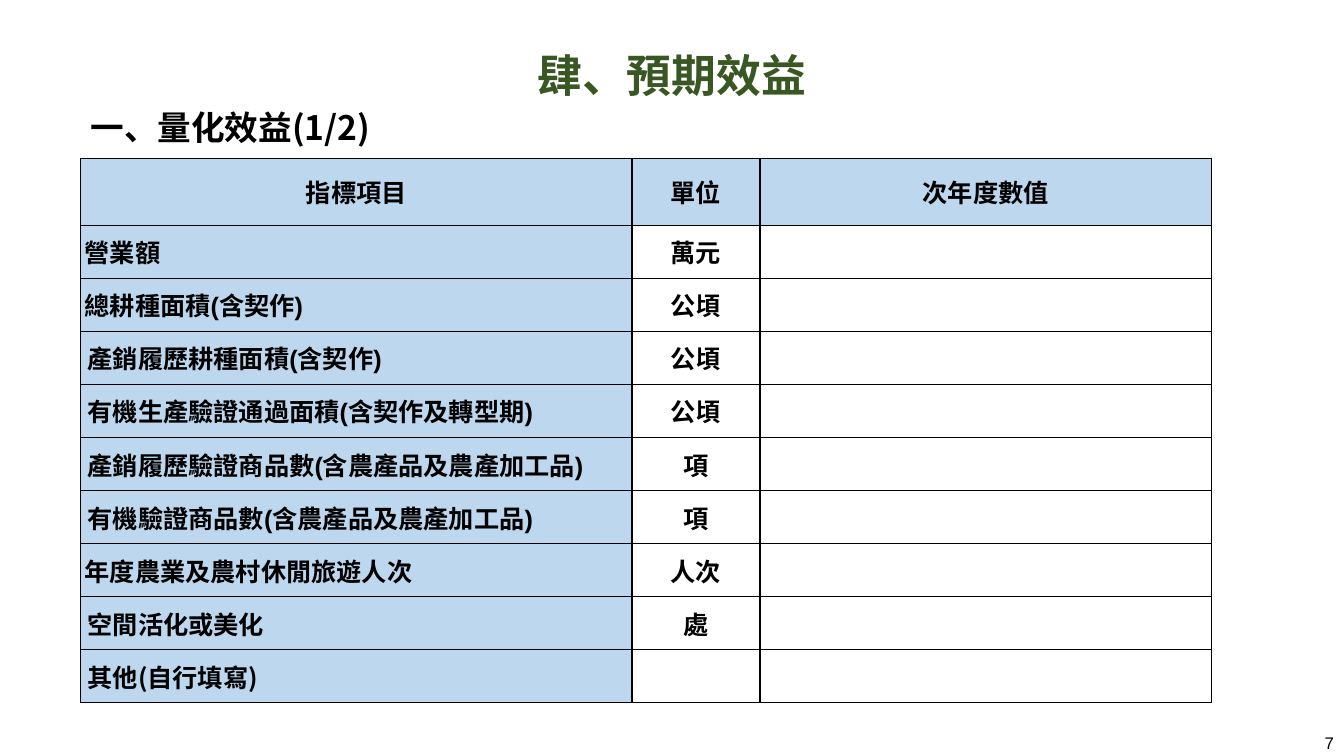
"""Build the slide on expected benefits: a title, a subtitle and an indicator table."""
import pptx
import pptx.dml.color
import pptx.enum.text
import pptx.oxml
import pptx.oxml.ns
import pptx.util

WIDTH, HEIGHT = 13.33, 7.5
SANS, CJK = "Arial", "Noto Sans CJK SC"
BLACK, WHITE, GREEN, BLUE = "000000", "FFFFFF", "385723", "BDD7EE"
LEFT = pptx.enum.text.PP_ALIGN.LEFT
CENTER = pptx.enum.text.PP_ALIGN.CENTER
RIGHT = pptx.enum.text.PP_ALIGN.RIGHT
TOP = pptx.enum.text.MSO_ANCHOR.TOP
MIDDLE = pptx.enum.text.MSO_ANCHOR.MIDDLE
NARROW, WIDE, HANGING = 0.04, 0.07, 0.33

COLUMNS = (41.02, 9.53, 33.6)
HEADER_ROW, BODY_ROW = 8.87, 7.02
HEADINGS = ("指標項目", "單位", "次年度數值")
INDICATORS = (
    ("營業額", "萬元", NARROW, SANS, 0),
    ("總耕種面積(含契作)", "公頃", NARROW, SANS, 0),
    ("產銷履歷耕種面積(含契作)", "公頃", WIDE, SANS, 0),
    ("有機生產驗證通過面積(含契作及轉型期)", "公頃", WIDE, SANS, 0),
    ("產銷履歷驗證商品數(含農產品及農產加工品)", "項", WIDE, SANS, 0),
    ("有機驗證商品數(含農產品及農產加工品)", "項", WIDE, SANS, 0),
    ("年度農業及農村休閒旅遊人次", "人次", NARROW, CJK, 0),
    ("空間活化或美化", "處", WIDE, CJK, HANGING),
    ("其他(自行填寫)", "", WIDE, CJK, 0),
)


def across(share):
    """Return a percentage of the slide width as a length."""
    return pptx.util.Inches(WIDTH * share / 100)


def down(share):
    """Return a percentage of the slide height as a length."""
    return pptx.util.Inches(HEIGHT * share / 100)


def color(value):
    """Return the colour for a hex string."""
    return pptx.dml.color.RGBColor.from_string(value)


def apply(target, values):
    """Set each named attribute on the target."""
    for name, value in values.items():
        setattr(target, name, value)


def write(para, text, size, face, ink=BLACK, bold=True, **layout):
    """Write one formatted span into a paragraph."""
    apply(para, layout)
    span = para.add_run()
    span.text = text
    apply(span.font, {"size": pptx.util.Pt(size), "name": face, "bold": bold})
    span.font.color.rgb = color(ink)
    east = pptx.oxml.parse_xml(f'<a:ea {pptx.oxml.ns.nsdecls("a")} typeface="{CJK}"/>')
    span.font._element.find(pptx.oxml.ns.qn("a:latin")).addnext(east)


def add_text(page, area, text, size, face, anchor=MIDDLE, inset=0, **style):
    """Add a text box whose area is given in percentages of the slide."""
    left, top, width, height = area
    box = page.shapes.add_textbox(across(left), down(top), across(width), down(height))
    margin = pptx.util.Inches(inset)
    apply(box.text_frame, {"word_wrap": True, "vertical_anchor": anchor,
                           "margin_top": margin, "margin_bottom": margin})
    write(box.text_frame.paragraphs[0], text, size, face, **style)


def add_borders(cell):
    """Draw thin black lines on all four sides of a cell."""
    properties = cell._tc.get_or_add_tcPr()
    for position, side in enumerate(("lnL", "lnR", "lnT", "lnB")):
        properties.insert(position, pptx.oxml.parse_xml(
            f'<a:{side} {pptx.oxml.ns.nsdecls("a")} w="12700"><a:solidFill>'
            f'<a:srgbClr val="{BLACK}"/></a:solidFill></a:{side}>'))


def fill_cell(cell, text, fill, inset=NARROW, face=SANS, align=CENTER, hanging=0):
    """Fill, frame and label one table cell."""
    margin = pptx.util.Inches(inset)
    apply(cell, {"vertical_anchor": MIDDLE, "margin_left": margin, "margin_right": margin,
                 "margin_top": 0, "margin_bottom": 0})
    cell.fill.solid()
    cell.fill.fore_color.rgb = color(fill)
    add_borders(cell)
    para = cell.text_frame.paragraphs[0]
    if hanging:
        indent = pptx.util.Inches(hanging)
        apply(para._p.get_or_add_pPr(), {"marL": indent, "indent": -indent})
    if text:
        write(para, text, 18, face, alignment=align)


def add_indicators(page):
    """Add the table of indicators, units and next-year values."""
    heights = [HEADER_ROW] + [BODY_ROW] * len(INDICATORS)
    table = page.shapes.add_table(len(heights), len(COLUMNS), across(6), down(20.93),
                                  across(sum(COLUMNS)), down(sum(heights))).table
    apply(table, {"first_row": False, "horz_banding": False})
    for column, share in zip(table.columns, COLUMNS):
        column.width = across(share)
    for row, share in zip(table.rows, heights):
        row.height = down(share)
    for index, heading in enumerate(HEADINGS):
        fill_cell(table.cell(0, index), heading, BLUE, hanging=HANGING)
    for row, (item, unit, inset, face, hanging) in enumerate(INDICATORS, 1):
        fill_cell(table.cell(row, 0), item, BLUE, inset, face, LEFT, hanging)
        fill_cell(table.cell(row, 1), unit, WHITE, inset)
        fill_cell(table.cell(row, 2), "", WHITE)


def main():
    """Build and save the slide."""
    deck = pptx.Presentation()
    apply(deck, {"slide_width": across(100), "slide_height": down(100)})
    page = deck.slides.add_slide(deck.slide_layouts[6])
    add_text(page, (77.5, 96.4, 22.5, 3.6), "7", 12, SANS, bold=False, alignment=RIGHT)
    add_text(page, (0, 5.6, 100, 8.53), "肆、預期效益", 32, CJK, ink=GREEN, alignment=CENTER)
    add_text(page, (6, 14.8, 39.9, 5.47), "一、量化效益(1/2)", 24, CJK, TOP, 0.05,
             line_spacing=pptx.util.Pt(22), space_after=pptx.util.Pt(6))
    add_indicators(page)
    deck.save("out.pptx")


if __name__ == "__main__":
    main()
